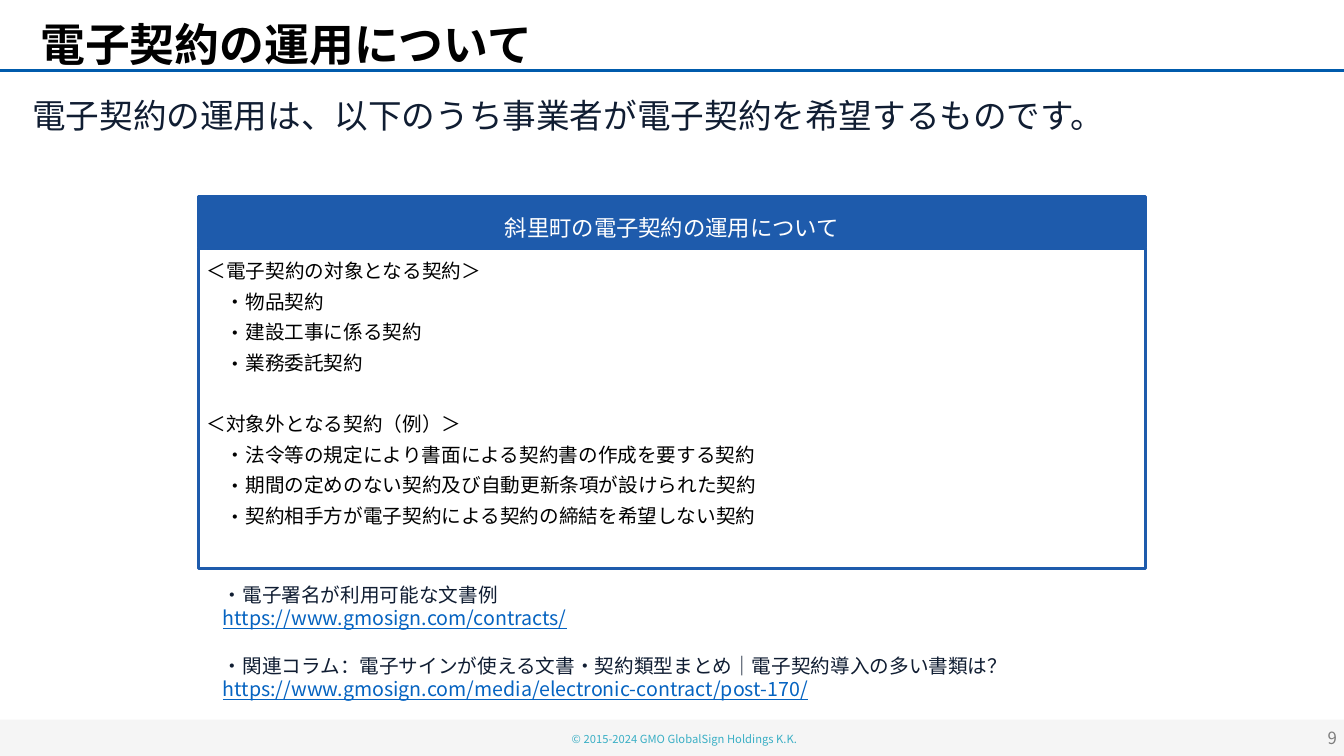
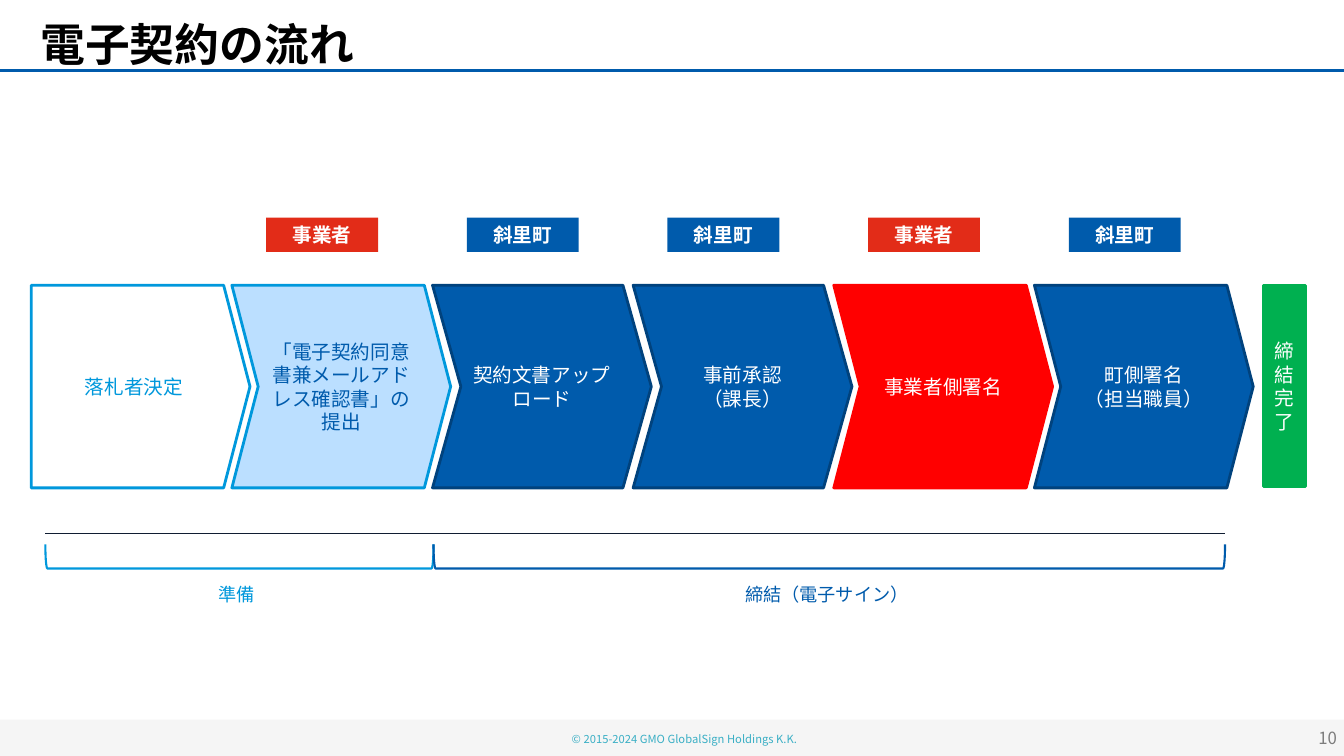
from dataclasses import dataclass

from lxml import etree
from pptx import Presentation
from pptx.dml.color import RGBColor
from pptx.enum.shapes import MSO_CONNECTOR, MSO_SHAPE
from pptx.enum.text import MSO_ANCHOR, MSO_AUTO_SIZE, PP_ALIGN
from pptx.oxml.ns import qn
from pptx.util import Inches, Pt

LEFT, CENTER, RIGHT = PP_ALIGN.LEFT, PP_ALIGN.CENTER, PP_ALIGN.RIGHT
TOP, MIDDLE = MSO_ANCHOR.TOP, MSO_ANCHOR.MIDDLE
RECT, PENTAGON, CHEVRON = MSO_SHAPE.RECTANGLE, MSO_SHAPE.PENTAGON, MSO_SHAPE.CHEVRON
BRACKET = MSO_SHAPE.LEFT_BRACKET
STRAIGHT = MSO_CONNECTOR.STRAIGHT


class Theme:
    font = "Noto Sans CJK JP"
    black, white, ink = "000000", "FFFFFF", "101D32"
    blue, navy, panel = "005BAC", "00427D", "1E5BAC"
    sky, pale = "0098DC", "BBDFFF"
    red, tag_red, green = "FF0000", "E22C18", "00B050"
    link, band, copyright, page = "0563C1", "F5F5F5", "3AAFC5", "7D7D7D"
    title_size, lead_size, header_size, text_size = 32, 24, 16, 14
    phase_size, page_size, copyright_size = 13, 12, 8


@dataclass
class Para:
    text: str
    bullet: bool = False
    level: int = 0
    gap: float = 0
    link: bool = False


SLIDE_W, SLIDE_H = 13.33, 7.5
COPYRIGHT = "© 2015-2024 GMO GlobalSign Holdings K.K."

OPERATION_TITLE = "電子契約の運用について"
LEAD = "電子契約の運用は、以下のうち事業者が電子契約を希望するものです。"
PANEL_HEADER = "斜里町の電子契約の運用について"
PANEL_GROUPS = [
    ("＜電子契約の対象となる契約＞",
     ["物品契約", "建設工事に係る契約", "業務委託契約"]),
    ("＜対象外となる契約（例）＞",
     ["法令等の規定により書面による契約書の作成を要する契約",
      "期間の定めのない契約及び自動更新条項が設けられた契約",
      "契約相手方が電子契約による契約の締結を希望しない契約"]),
]
REFERENCES = [
    ("電子署名が利用可能な文書例", "https://www.gmosign.com/contracts/"),
    ("関連コラム：電子サインが使える文書・契約類型まとめ｜電子契約導入の多い書類は？",
     "https://www.gmosign.com/media/electronic-contract/post-170/"),
]

FLOW_TITLE = "電子契約の流れ"
COMPANY, TOWN = ("事業者", Theme.tag_red), ("斜里町", Theme.blue)
OPEN_STYLE = (None, Theme.sky, Theme.sky)
PALE_STYLE = (Theme.pale, Theme.sky, Theme.blue)
TOWN_STYLE = (Theme.blue, Theme.navy, Theme.white)
COMPANY_STYLE = (Theme.red, Theme.red, Theme.white)
# lines, (fill, outline, text colour), actor, point depth
STEPS = [
    (["落札者決定"], OPEN_STYLE, None, 0.13),
    (["「電子契約同意書兼メールアドレス確認書」の", "提出"], PALE_STYLE, COMPANY, 0.13),
    (["契約文書アップロード"], TOWN_STYLE, TOWN, 0.14),
    (["事前承認", "（課長）"], TOWN_STYLE, TOWN, 0.14),
    (["事業者側署名"], COMPANY_STYLE, COMPANY, 0.13),
    (["町側署名", "（担当職員）"], TOWN_STYLE, TOWN, 0.13),
]
FINISH = "締結完了"
# label, left, right, colour, label centre
PHASES = [
    ("準備", 0.45, 4.3, Theme.sky, 2.35),
    ("締結（電子サイン）", 4.3, 12.15, Theme.blue, 8.2),
]


def rgb(value):
    return RGBColor.from_string(value)


def add_bullet(properties):
    etree.SubElement(properties, qn("a:buFont"), typeface=Theme.font)
    etree.SubElement(properties, qn("a:buChar"), char="・")


def write(shape, paras, size, color, align=LEFT, anchor=TOP, spacing=1.0, bold=False):
    frame = shape.text_frame
    frame.word_wrap = True
    frame.auto_size = MSO_AUTO_SIZE.NONE
    frame.vertical_anchor = anchor
    frame.margin_left = frame.margin_right = Inches(0.08)
    frame.margin_top = frame.margin_bottom = Inches(0.04)
    for index, item in enumerate(paras):
        para = item if isinstance(item, Para) else Para(item)
        paragraph = frame.paragraphs[0] if index == 0 else frame.add_paragraph()
        paragraph.text = para.text
        paragraph.alignment = align
        paragraph.line_spacing = spacing
        paragraph.space_before = Pt(para.gap)
        paragraph.space_after = Pt(0)
        properties = paragraph._p.get_or_add_pPr()
        if para.bullet:
            hang = Inches(0.19)
            properties.set("marL", str(hang * (para.level + 1)))
            properties.set("indent", str(-hang))
            add_bullet(properties)
        font = paragraph.font
        font.name = Theme.font
        font.size = Pt(size)
        font.bold = bold
        font.underline = para.link
        font.color.rgb = rgb(Theme.link if para.link else color)
        # East Asian glyphs take their own typeface entry
        etree.SubElement(properties.find(qn("a:defRPr")), qn("a:ea"), typeface=Theme.font)


def add_text(slide, box, paras, size, color, **style):
    write(slide.shapes.add_textbox(*map(Inches, box)), paras, size, color, **style)


def add_box(slide, kind, box, fill=None, outline=None, width=2):
    shape = slide.shapes.add_shape(kind, *map(Inches, box))
    shape.shadow.inherit = False
    if fill:
        shape.fill.solid()
        shape.fill.fore_color.rgb = rgb(fill)
    else:
        shape.fill.background()
    if outline:
        shape.line.color.rgb = rgb(outline)
        shape.line.width = Pt(width)
    else:
        shape.line.fill.background()
    return shape


def add_rule(slide, left, right, y, color, width):
    rule = slide.shapes.add_connector(STRAIGHT, *map(Inches, (left, y, right, y)))
    rule.line.color.rgb = rgb(color)
    rule.line.width = Pt(width)
    etree.SubElement(rule._element.spPr, qn("a:effectLst"))


def add_page(deck, title, number):
    """Add a slide with the shared band, rule, title and footer."""
    slide = deck.slides.add_slide(deck.slide_layouts[5])
    add_box(slide, RECT, (0, 7.14, SLIDE_W, 0.36), Theme.band)
    add_rule(slide, 0, SLIDE_W, 0.7, Theme.blue, 2.25)
    add_text(slide, (5.34, 7.2, 2.65, 0.26), [COPYRIGHT], Theme.copyright_size,
             Theme.copyright, align=RIGHT, spacing=1.2)
    add_text(slide, (12.74, 7.12, 0.6, 0.4), [str(number)], Theme.page_size,
             Theme.page, align=RIGHT, anchor=MIDDLE)
    heading = slide.shapes.title
    heading.left, heading.top, heading.width, heading.height = map(
        Inches, (0.32, 0.09, 11.21, 0.68))
    write(heading, [title], Theme.title_size, Theme.black, anchor=MIDDLE, bold=True)
    return slide


def build_operation(deck):
    slide = add_page(deck, OPERATION_TITLE, 9)
    add_text(slide, (0.24, 0.9, 12.8, 0.6), [LEAD], Theme.lead_size, Theme.ink)

    contracts = []
    for heading, items in PANEL_GROUPS:
        contracts.append(Para(heading, gap=22 if contracts else 0))
        contracts += [Para(item, bullet=True, level=1) for item in items]
    panel = add_box(slide, RECT, (1.97, 2.46, 9.39, 3.18), None, Theme.panel, 2.25)
    write(panel, contracts, Theme.text_size, Theme.black, spacing=1.3)
    header = add_box(slide, RECT, (1.97, 1.95, 9.39, 0.51), Theme.panel, Theme.panel, 2.25)
    write(header, [PANEL_HEADER], Theme.header_size, Theme.white, align=CENTER, spacing=1.5)

    references = []
    for label, address in REFERENCES:
        references.append(Para(label, bullet=True, gap=17 if references else 0))
        references.append(Para(address, link=True))
    add_text(slide, (2.13, 5.74, 9.39, 1.3), references, Theme.text_size, Theme.ink)


def build_flow(deck):
    slide = add_page(deck, FLOW_TITLE, 10)
    add_rule(slide, 0.45, 12.15, 5.29, Theme.ink, 1)

    first_left, pitch, top, height = 0.31, 1.99, 2.83, 2.01
    for index, (lines, (fill, outline, color), actor, depth) in enumerate(STEPS):
        left = first_left + index * pitch
        kind = CHEVRON if index else PENTAGON
        step = add_box(slide, kind, (left, top, 2.17, height), fill, outline)
        step.adjustments[0] = depth
        write(step, lines, Theme.text_size, color, align=CENTER, anchor=MIDDLE)
        if actor:
            name, tag_color = actor
            tag = add_box(slide, RECT, (left + 0.34, 2.16, 1.11, 0.34), tag_color)
            write(tag, [name], Theme.text_size, Theme.white, align=CENTER,
                  anchor=MIDDLE, bold=True)
    finish = add_box(slide, RECT, (12.53, top, 0.42, 2), Theme.green, Theme.green)
    write(finish, [FINISH], Theme.text_size, Theme.white, align=CENTER, anchor=MIDDLE)

    depth, middle_y, label_w = 0.24, 5.52, 3.3
    for label, left, right, color, label_x in PHASES:
        span, middle_x = right - left, (left + right) / 2
        bracket = add_box(slide, BRACKET, (middle_x - depth / 2, middle_y - span / 2,
                                           depth, span), None, color, 1.5)
        bracket.rotation = 270
        add_text(slide, (label_x - label_w / 2, 5.64, label_w, 0.41), [label],
                 Theme.phase_size, color, align=CENTER, spacing=1.5)


def main():
    deck = Presentation()
    deck.slide_width, deck.slide_height = Inches(SLIDE_W), Inches(SLIDE_H)
    build_operation(deck)
    build_flow(deck)
    deck.save("out.pptx")


if __name__ == "__main__":
    main()
